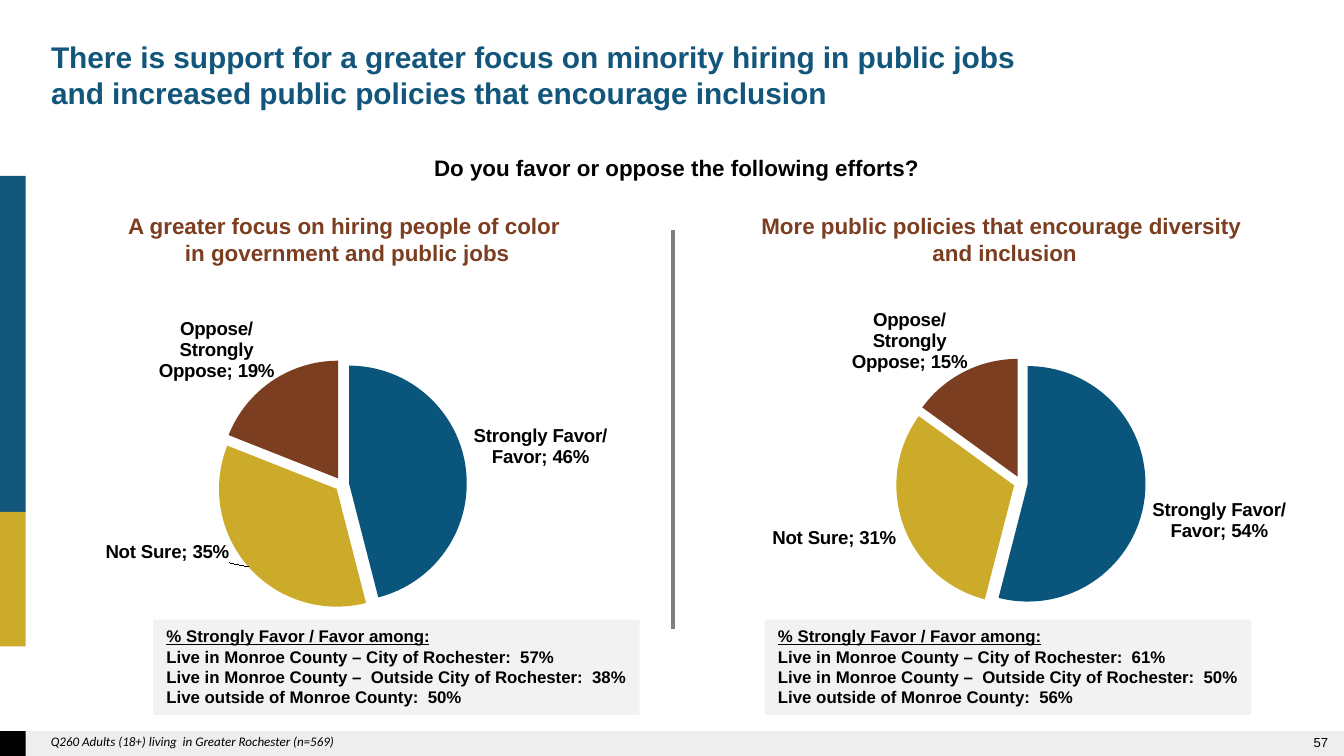
from lxml.etree import SubElement
from pptx import Presentation
from pptx.chart.data import CategoryChartData as Data
from pptx.dml.color import RGBColor
from pptx.enum.chart import XL_CHART_TYPE as Kind, XL_LABEL_POSITION as Spot
from pptx.enum.shapes import MSO_CONNECTOR as Link, MSO_SHAPE as Form
from pptx.enum.text import MSO_ANCHOR as Anchor, MSO_AUTO_SIZE as Fit, PP_ALIGN as Align
from pptx.oxml import parse_xml
from pptx.oxml.ns import nsdecls, qn
from pptx.util import Pt

PX = 9144
BLUE = RGBColor(0x12, 0x56, 0x7C)
NAVY = RGBColor(0x09, 0x55, 0x7C)
GOLD = RGBColor(0xCC, 0xAB, 0x2B)
BROWN = RGBColor(0x7C, 0x3E, 0x20)
BLACK = RGBColor(0, 0, 0)
GRAY = RGBColor(0x80, 0x80, 0x80)
SLATE = RGBColor(0x59, 0x59, 0x59)
PALE = RGBColor(0xF2, 0xF2, 0xF2)

HEAD = {"size": Pt(12), "name": "Arial", "bold": True}
NOTE = {"size": Pt(9), "name": "Arial", "bold": True}
FOOT = {"size": Pt(7), "name": "Calibri", "italic": True}
PAGE = {"size": Pt(7), "name": "Arial"}
TITLE = {"size": Pt(16), "name": "Arial", "bold": True}
LABEL = {"size": Pt(10), "name": "Arial", "bold": True}
CATS = ["Strongly Favor/ Favor", "Not Sure", "Oppose/ Strongly Oppose"]


def emu(box):
    """Turn px lengths into EMU."""
    return [n * PX for n in box]


def style(font, look, color):
    """Apply a dict of format values and a colour to a font."""
    for key, val in look.items():
        setattr(font, key, val)
    font.color.rgb = color


def write(frame, text, look, color=BLACK, align=Align.LEFT, wrap=True):
    """Fill a text frame with formatted lines."""
    frame.text = text
    opts = {"word_wrap": wrap, "auto_size": Fit.NONE, "vertical_anchor": Anchor.TOP}
    for key, val in opts.items():
        setattr(frame, key, val)
    for para in frame.paragraphs:
        para.alignment = align
        for run in para.runs:
            style(run.font, look, color)


def label(slide, box, text, look, **opts):
    """Add a text box."""
    frame = slide.shapes.add_textbox(*emu(box)).text_frame
    write(frame, text, look, **opts)
    return frame


def block(slide, box, color):
    """Add a plain filled rectangle."""
    shape = slide.shapes.add_shape(Form.RECTANGLE, *emu(box))
    shape.shadow.inherit = False
    shape.fill.solid()
    shape.fill.fore_color.rgb = color
    shape.line.fill.background()
    return shape


def edge(slide, box):
    """Draw the footer band and the colour bars at the left edge."""
    x, y, w, h = box
    band = block(slide, (x, y + h - 19, w, 19), SLATE)
    tint = band.fill._xPr.find(".//" + qn("a:srgbClr"))
    SubElement(tint, qn("a:alpha"), val="10000")
    for top, tall, color in ((131, 250, BLUE), (381, 100, GOLD), (h - 19, 19, BLACK)):
        block(slide, (x, y + top, 19, tall), color)


def header(slide, box):
    """Place the title and the survey question."""
    x, y, w, h = box
    title = slide.shapes.title
    title.left, title.top, title.width, title.height = emu((x + 28, y + 24, 852, 50))
    write(title.text_frame,
          "There is support for a greater focus on minority hiring in public jobs\v"
          "and increased public policies that encourage inclusion", TITLE, BLUE)
    label(slide, (x + 266, y + h - 30, 475, 30),
          "Do you favor or oppose the following efforts?", HEAD, align=Align.CENTER)


def layout(**rules):
    """Make a manual chart layout."""
    lay = parse_xml(f'<c:layout {nsdecls("c")}><c:manualLayout/></c:layout>')
    for key, val in rules.items():
        SubElement(lay[0], qn("c:" + key), val=str(val))
    return lay


def split_tag(node):
    """Set the mark between category and value in chart labels."""
    mark = parse_xml(f'<c:separator {nsdecls("c")}>; </c:separator>')
    node.find(qn("c:showBubbleSize")).addnext(mark)


def shift(point, dx, dy):
    """Move one pie label from its default place."""
    tag = point.data_label
    style(tag.font, LABEL, BLACK)
    tag.position = Spot.OUTSIDE_END
    node = tag._dLbl
    node.find(qn("c:showCatName")).set("val", "1")
    node.find(qn("c:idx")).addnext(layout(x=dx, y=dy))
    split_tag(node)


def pie(slide, box, vals, moves):
    """Add an exploded pie with outside labels."""
    data = Data(number_format="0%")
    data.categories = CATS
    data.add_series("Series 1", vals)
    chart = slide.shapes.add_chart(Kind.PIE, *emu(box), data).chart
    chart.has_title = chart.has_legend = False
    style(chart.font, {**LABEL, "size": Pt(8)}, BLACK)
    plot = chart.plots[0]
    plot.vary_by_categories = True
    part = plot.series[0]
    for i, color in enumerate((NAVY, GOLD, BROWN)):
        fill = part.points[i].format.fill
        fill.solid()
        fill.fore_color.rgb = color
    burst = parse_xml(f'<c:explosion {nsdecls("c")} val="6"/>')
    part._element.find(qn("c:dPt")).addprevious(burst)
    tags = part.data_labels
    opts = {"show_value": True, "show_category_name": True, "show_percentage": False,
            "number_format": "0%", "number_format_is_linked": False,
            "position": Spot.OUTSIDE_END}
    for key, val in opts.items():
        setattr(tags, key, val)
    style(tags.font, LABEL, BLACK)
    split_tag(tags._element)
    for i, move in moves.items():
        shift(part.points[i], *move)
    area = plot._element.getparent()
    for old in area.findall(qn("c:layout")):
        area.remove(old)
    area.insert(0, layout(layoutTarget="inner", xMode="edge", yMode="edge",
                          x=0.33, y=0.2, w=0.37, h=0.66))


def panel(slide, box, text, vals, shares, head, note, moves):
    """Place a heading, its pie and the breakdown box."""
    x, y, w, h = box
    label(slide, (x + head, y, 475, 50), text, HEAD, color=BROWN, align=Align.CENTER)
    pie(slide, (x, y + h - 282, w, 282), vals, moves)
    card = block(slide, (x + note, y + 308, 362, 71), PALE)
    city, near, far = shares
    write(card.text_frame,
          "% Strongly Favor / Favor among:\n"
          f"Live in Monroe County – City of Rochester:  {city}%\n"
          f"Live in Monroe County –  Outside City of Rochester:  {near}%\n"
          f"Live outside of Monroe County:  {far}%", NOTE, wrap=False)
    card.text_frame.paragraphs[0].runs[0].font.underline = True


def split(slide, box):
    """Draw the vertical rule between the panels."""
    x, y, w, h = box
    line = slide.shapes.add_connector(Link.STRAIGHT, *emu((x, y, x + w, y + h)))
    line.line.color.rgb = GRAY
    line.line.width = Pt(2)
    SubElement(line._element.spPr, qn("a:effectLst"))


def footer(slide, box):
    """Place the source note and the page number."""
    x, y, w, h = box
    label(slide, (x + 28, y, 658, h), "Q260 Adults (18+) living  in Greater Rochester (n=569)",
          FOOT)
    num = label(slide, (x + 765, y + 3, 233, 17), "57", PAGE, align=Align.RIGHT)
    num.vertical_anchor = Anchor.MIDDLE


def main():
    """Build and save the slide."""
    deck = Presentation()
    deck.slide_width = 1000 * PX
    deck.slide_height = deck.slide_width * 9 // 16
    slide = deck.slides.add_slide(deck.slide_layouts[5])
    edge(slide, (0, 0, 1000, 563))
    header(slide, (0, 0, 1000, 140))
    split(slide, (501, 171, 0, 297))
    panel(slide, (-4, 153, 502, 340),
          "A greater focus on hiring people of color \nin government and public jobs",
          (0.46, 0.35, 0.19), (57, 38, 50), 25, 118, {1: (-0.02, -0.08), 2: (0.01, 0.02)})
    panel(slide, (501, 153, 502, 339),
          "More public policies that encourage diversity \nand inclusion",
          (0.54, 0.31, 0.15), (61, 50, 56), 9, 68, {2: (0.01, 0.02)})
    footer(slide, (0, 541, 1000, 22))
    deck.save("out.pptx")


if __name__ == "__main__":
    main()
